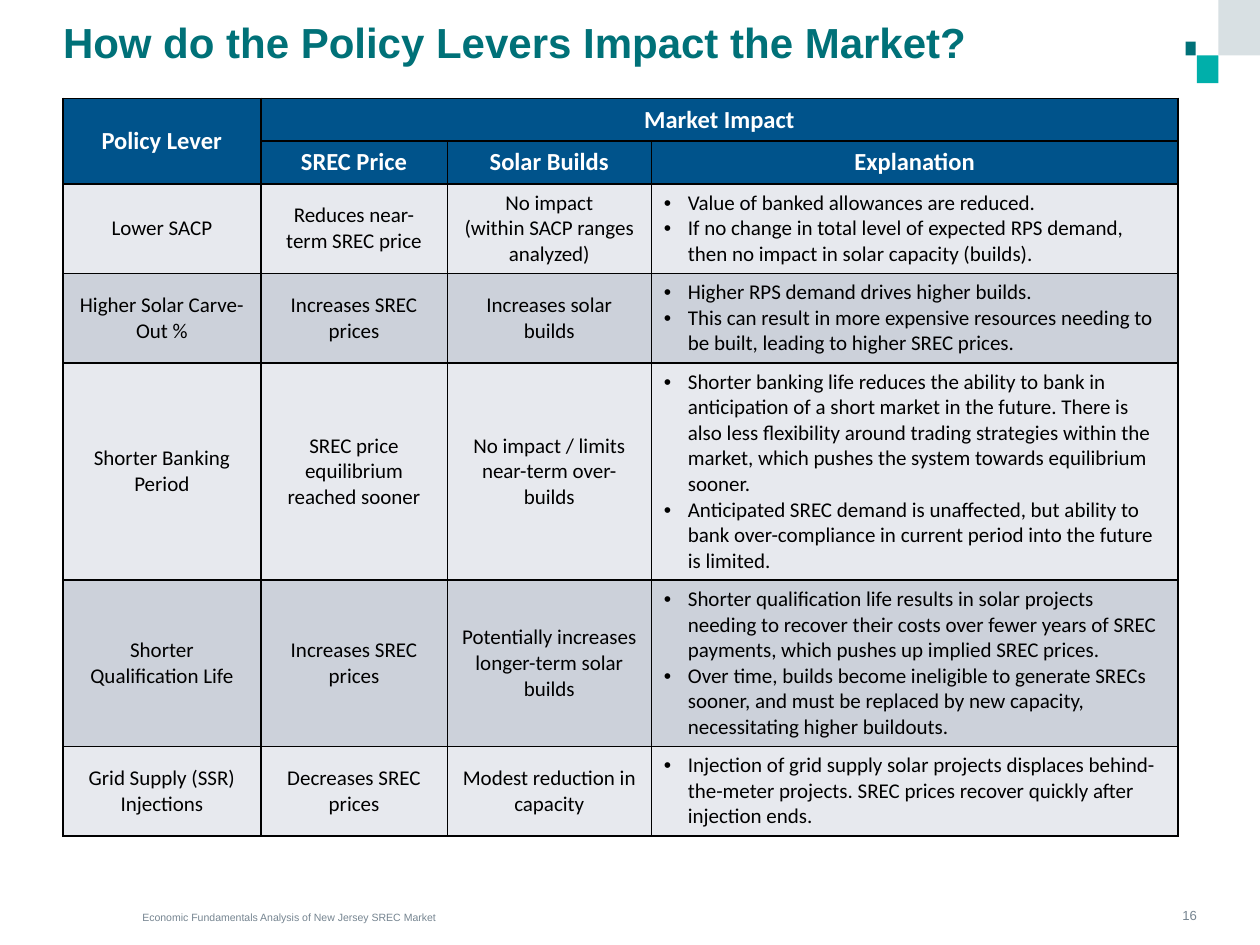
"""Build the slide on how policy levers affect the SREC market."""
from dataclasses import dataclass

from lxml import etree
from pptx import Presentation
from pptx.dml.color import RGBColor
from pptx.enum.shapes import MSO_SHAPE
from pptx.enum.text import MSO_ANCHOR, MSO_AUTO_SIZE, PP_ALIGN
from pptx.oxml.ns import qn
from pptx.util import Inches, Pt

LEFT, CENTER, RIGHT = PP_ALIGN.LEFT, PP_ALIGN.CENTER, PP_ALIGN.RIGHT
TOP, MIDDLE, BOTTOM = MSO_ANCHOR.TOP, MSO_ANCHOR.MIDDLE, MSO_ANCHOR.BOTTOM
RECTANGLE = MSO_SHAPE.RECTANGLE
NO_AUTOFIT = MSO_AUTO_SIZE.NONE

TEAL, GRAY, BLACK, WHITE = "007178", "768591", "000000", "FFFFFF"
HEADER_FILL = "00538B"
BAND_FILLS = ("E7E9EE", "CCD1DA")
COLUMN_WIDTHS = (1.57, 1.48, 1.62, 4.18)
ROW_HEIGHTS = (0.34, 0.34, 0.71, 0.71, 1.72, 1.32, 0.71)
HEADERS = ("SREC Price", "Solar Builds", "Explanation")


@dataclass
class Block:
    left: float
    top: float
    width: float
    height: float
    fill: str


@dataclass
class Lever:
    name: str
    price: str
    builds: str
    explanation: tuple[str, ...]


BLOCKS = (
    Block(9.41, 0.33, 0.08, 0.11, TEAL),
    Block(9.5, 0.44, 0.17, 0.22, "00AFAA"),
    Block(9.67, 0, 0.33, 0.44, "D8E0E3"),
)

LEVERS = (
    Lever("Lower SACP", "Reduces near-term SREC price",
          "No impact\n(within SACP ranges analyzed)",
          ("Value of banked allowances are reduced.",
           "If no change in total level of expected RPS demand, then no impact "
           "in solar capacity (builds).")),
    Lever("Higher Solar Carve-Out %", "Increases SREC prices", "Increases solar builds",
          ("Higher RPS demand drives higher builds.",
           "This can result in more expensive resources needing to be built, "
           "leading to higher SREC prices.")),
    Lever("Shorter Banking Period", "SREC price equilibrium reached sooner",
          "No impact / limits near-term over-builds",
          ("Shorter banking life reduces the ability to bank in anticipation of a "
           "short market in the future. There is also less flexibility around trading "
           "strategies within the market, which pushes the system towards equilibrium "
           "sooner.",
           "Anticipated SREC demand is unaffected, but ability to bank over-compliance "
           "in current period into the future is limited.")),
    Lever("Shorter Qualification Life", "Increases SREC prices",
          "Potentially increases longer-term solar builds",
          ("Shorter qualification life results in solar projects needing to recover "
           "their costs over fewer years of SREC payments, which pushes up implied "
           "SREC prices.",
           "Over time, builds become ineligible to generate SRECs sooner, and must be "
           "replaced by new capacity, necessitating higher buildouts.")),
    Lever("Grid Supply (SSR) Injections", "Decreases SREC prices",
          "Modest reduction in capacity",
          ("Injection of grid supply solar projects displaces behind-the-meter "
           "projects. SREC prices recover quickly after injection ends.",)),
)


def rgb(color: str) -> RGBColor:
    """Turn a hex string into a colour."""
    return RGBColor.from_string(color)


def add_bullet(paragraph) -> None:
    """Give a paragraph a hanging round bullet."""
    properties = paragraph._p.get_or_add_pPr()
    properties.set("marL", str(Inches(0.19)))
    properties.set("indent", str(-Inches(0.19)))
    etree.SubElement(properties, qn("a:buFont")).set("typeface", "Arial")
    etree.SubElement(properties, qn("a:buChar")).set("char", "•")


def write_text(frame, text: str, *, size: float, color: str, font: str = "Arial",
               bold: bool = False, align=LEFT, bullets: bool = False,
               line_spacing: float = 1.0) -> None:
    """Fill a text frame with formatted paragraphs, one per line."""
    frame.text = text
    for paragraph in frame.paragraphs:
        if bullets:
            add_bullet(paragraph)
        paragraph.alignment = align
        paragraph.line_spacing = line_spacing
        for run in paragraph.runs:
            run.font.name = font
            run.font.size = Pt(size)
            run.font.bold = bold
            run.font.color.rgb = rgb(color)


def prepare_frame(frame, anchor) -> None:
    """Set a wrapping frame without insets."""
    frame.word_wrap = True
    frame.auto_size = NO_AUTOFIT
    frame.vertical_anchor = anchor
    frame.margin_left = frame.margin_right = frame.margin_top = frame.margin_bottom = 0


def add_label(slide, text: str, left: float, top: float, width: float, height: float,
              **text_format) -> None:
    """Add a text box anchored at the bottom."""
    frame = slide.shapes.add_textbox(
        Inches(left), Inches(top), Inches(width), Inches(height)).text_frame
    prepare_frame(frame, BOTTOM)
    write_text(frame, text, color=GRAY, **text_format)


def add_block(slide, block: Block) -> None:
    """Draw one plain decorative rectangle."""
    shape = slide.shapes.add_shape(RECTANGLE, Inches(block.left), Inches(block.top),
                                   Inches(block.width), Inches(block.height))
    shape.shadow.inherit = False
    shape.fill.solid()
    shape.fill.fore_color.rgb = rgb(block.fill)
    shape.line.fill.background()


def style_cell(cell, fill: str) -> None:
    """Give a cell black borders, a fill and a middle anchor."""
    properties = cell._tc.get_or_add_tcPr()
    for side in ("lnL", "lnR", "lnT", "lnB"):
        border = etree.SubElement(properties, qn(f"a:{side}"), w=str(Pt(1)))
        solid = etree.SubElement(border, qn("a:solidFill"))
        etree.SubElement(solid, qn("a:srgbClr")).set("val", BLACK)
    cell.fill.solid()
    cell.fill.fore_color.rgb = rgb(fill)
    cell.vertical_anchor = MIDDLE


def write_header(cell, text: str) -> None:
    """Write a table heading."""
    write_text(cell.text_frame, text, size=14, color=WHITE, font="Calibri",
               bold=True, align=CENTER)


def add_lever_table(slide) -> None:
    """Add the table of levers and their market impact."""
    table = slide.shapes.add_table(
        len(ROW_HEIGHTS), len(COLUMN_WIDTHS), Inches(0.5), Inches(0.78),
        Inches(sum(COLUMN_WIDTHS)), Inches(sum(ROW_HEIGHTS))).table
    table.first_row = table.horz_banding = False
    for column, width in zip(table.columns, COLUMN_WIDTHS):
        column.width = Inches(width)
    for index, (row, height) in enumerate(zip(table.rows, ROW_HEIGHTS)):
        row.height = Inches(height)
        for cell in row.cells:
            style_cell(cell, HEADER_FILL if index < 2 else BAND_FILLS[index % 2])
    table.cell(0, 0).merge(table.cell(1, 0))
    table.cell(0, 1).merge(table.cell(0, 3))
    write_header(table.cell(0, 0), "Policy Lever")
    write_header(table.cell(0, 1), "Market Impact")
    for column, heading in enumerate(HEADERS, start=1):
        write_header(table.cell(1, column), heading)
    for row, lever in enumerate(LEVERS, start=2):
        texts = (lever.name, lever.price, lever.builds, "\n".join(lever.explanation))
        for column, text in enumerate(texts):
            is_list = column == 3
            write_text(table.cell(row, column).text_frame, text, size=12, color=BLACK,
                       font="Calibri", align=LEFT if is_list else CENTER,
                       bullets=is_list)


def main() -> None:
    """Build and save the slide."""
    presentation = Presentation()
    presentation.slide_width, presentation.slide_height = Inches(10), Inches(7.5)
    slide = presentation.slides.add_slide(presentation.slide_layouts[5])
    title = slide.shapes.title
    title.left, title.top = Inches(0.5), Inches(0.18)
    title.width, title.height = Inches(7.5), Inches(0.78)
    prepare_frame(title.text_frame, TOP)
    write_text(title.text_frame, "How do the Policy Levers Impact the Market?",
               size=24, color=TEAL, bold=True, line_spacing=0.9)
    for block in BLOCKS:
        add_block(slide, block)
    add_lever_table(slide)
    add_label(slide, "Economic Fundamentals Analysis of New Jersey SREC Market",
              1.13, 7.13, 3.57, 0.2, size=6)
    add_label(slide, "16", 9.11, 6.93, 0.39, 0.4, size=7.5, align=RIGHT)
    presentation.save("out.pptx")


if __name__ == "__main__":
    main()
